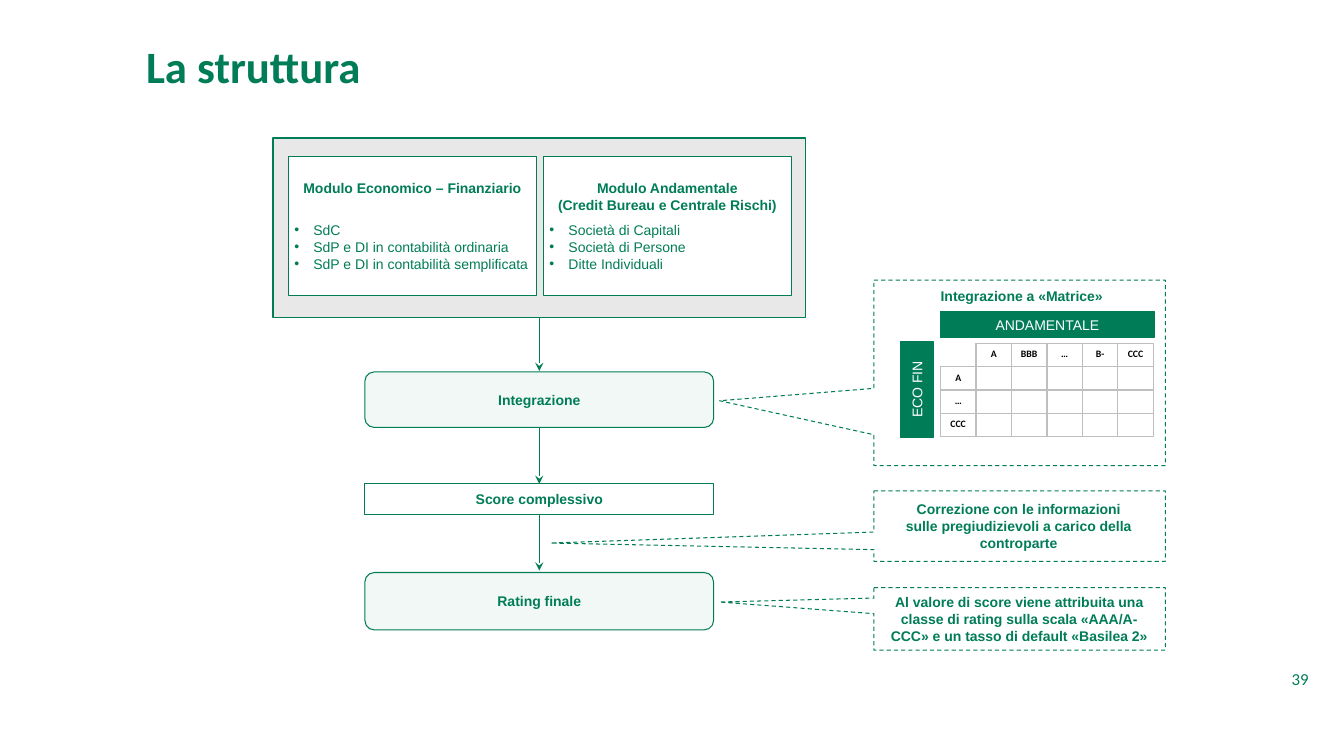
from lxml import etree
from pptx import Presentation
from pptx import util as u
from pptx.dml.color import RGBColor
from pptx.enum import dml, shapes, text
from pptx.oxml import ns

GREEN = RGBColor(0x00, 0x7D, 0x57)
GREY = RGBColor(0xE8, 0xE8, 0xE8)
WHITE = RGBColor(0xFF, 0xFF, 0xFF)
BLACK = RGBColor(0x00, 0x00, 0x00)
BORDER = "BFBFBF"

# Grid of square cells, ten to the inch
COLUMNS, ROWS = 133.33, 75
FLOW_LEFT, FLOW_WIDTH, FLOW_AXIS = 36.2, 34.6, 53.5
NOTE_LEFT, NOTE_WIDTH = 86.7, 28.9
TIGHT = (0.6, 0.3)

LABEL = dict(name="Arial", size=u.Pt(10), bold=True)
PLAIN = dict(LABEL, bold=False)
HEADING = dict(name="Calibri", size=u.Pt(32), bold=True)
FOLIO = dict(name="Calibri", size=u.Pt(12), bold=False)
MATRIX = dict(name="Calibri", size=u.Pt(7), bold=True)

CENTER, LEFT, RIGHT = (text.PP_ALIGN.CENTER, text.PP_ALIGN.LEFT, text.PP_ALIGN.RIGHT)
MIDDLE, TOP, BOTTOM = (text.MSO_ANCHOR.MIDDLE, text.MSO_ANCHOR.TOP,
                       text.MSO_ANCHOR.BOTTOM)
PROCESS = shapes.MSO_SHAPE.FLOWCHART_PROCESS


def cells(*counts):
    return [u.Inches(count / 10) for count in counts]


def child(parent, tag, **attributes):
    return etree.SubElement(parent, ns.qn(tag), attributes)


def style(target, values):
    for key, value in values.items():
        setattr(target, key, value)


def write(frame, lines, form=LABEL, color=GREEN, align=CENTER, anchor=MIDDLE,
          inset=(1, 0.5)):
    side, edge = cells(*inset)
    style(frame, dict(word_wrap=True, vertical_anchor=anchor, margin_left=side,
                      margin_right=side, margin_top=edge, margin_bottom=edge))
    for index, line in enumerate(lines):
        paragraph = frame.paragraphs[0] if index == 0 else frame.add_paragraph()
        paragraph.alignment = align
        run = paragraph.add_run()
        run.text = line
        style(run.font, form)
        run.font.color.rgb = color


def add_bullets(frame, items, gap):
    first = len(frame.paragraphs)
    for item in items:
        paragraph = frame.add_paragraph()
        paragraph.alignment = LEFT
        properties = paragraph._p.get_or_add_pPr()
        indent = int(u.Inches(0.19))
        properties.set("marL", str(indent))
        properties.set("indent", str(-indent))
        child(properties, "a:buFont", typeface="Arial")
        child(properties, "a:buChar", char="•")
        run = paragraph.add_run()
        run.text = item
        style(run.font, PLAIN)
        run.font.color.rgb = GREEN
    frame.paragraphs[first].space_before = u.Pt(gap)


def add_box(slide, kind, at, fill=None, weight=0.75, alpha=None):
    box = slide.shapes.add_shape(kind, *cells(*at))
    box.shadow.inherit = False
    style(box.line, dict(width=u.Pt(weight)))
    box.line.color.rgb = GREEN
    if fill is None:
        box.fill.background()
    else:
        box.fill.solid()
        box.fill.fore_color.rgb = fill
    if alpha:
        tint = box.fill._xPr.find(".//" + ns.qn("a:srgbClr"))
        child(tint, "a:alpha", val=str(alpha * 1000))
    return box


def add_text(slide, at, line, **options):
    frame = slide.shapes.add_textbox(*cells(*at)).text_frame
    write(frame, [line], **options)
    return frame


def add_module(slide, left, titles, items, gap):
    module = add_box(slide, PROCESS, (left, 15.5, 24.6, 13.8), WHITE)
    write(module.text_frame, titles, inset=TIGHT)
    add_bullets(module.text_frame, items, gap)


def add_arrow(slide, start, end):
    arrow = slide.shapes.add_connector(
        shapes.MSO_CONNECTOR.STRAIGHT, *cells(FLOW_AXIS, start, FLOW_AXIS, end))
    arrow.line.width = u.Pt(0.75)
    arrow.line.color.rgb = GREEN
    child(arrow.line._get_or_add_ln(), "a:tailEnd", type="stealth")
    child(arrow._element.spPr, "a:effectLst")


def add_step(slide, top, height, label):
    step = add_box(slide, shapes.MSO_SHAPE.ROUNDED_RECTANGLE,
                   (FLOW_LEFT, top, FLOW_WIDTH, height), GREEN, alpha=5)
    write(step.text_frame, [label])


def add_note(slide, top, height, pointer, label_at, label):
    note = add_box(slide, shapes.MSO_SHAPE.RECTANGULAR_CALLOUT,
                   (NOTE_LEFT, top, NOTE_WIDTH, height))
    note.line.dash_style = dml.MSO_LINE.DASH
    for index, share in enumerate(pointer):
        note.adjustments[index] = share
    add_text(slide, label_at, label, anchor=TOP)


def add_axis(slide, at, label, upward=False):
    axis = add_box(slide, shapes.MSO_SHAPE.RECTANGLE, at, GREEN)
    write(axis.text_frame, [label], PLAIN, WHITE, inset=(0.4, 0))
    if upward:
        axis.text_frame._txBody.bodyPr.set("vert", "vert270")


def border(cell, hidden=()):
    properties = cell._tc.get_or_add_tcPr()
    for index, side in enumerate(("a:lnL", "a:lnR", "a:lnT", "a:lnB")):
        edge = etree.Element(ns.qn(side), w=str(u.Pt(1)))
        if side in hidden:
            child(edge, "a:noFill")
        else:
            child(child(edge, "a:solidFill"), "a:srgbClr", val=BORDER)
        properties.insert(index, edge)


def add_matrix(slide, across, down):
    rows, columns = len(down) + 1, len(across) + 1
    matrix = slide.shapes.add_table(
        rows, columns, *cells(93.3, 34.1, 3.52 * columns, 2.3 * rows)).table
    style(matrix, dict(first_row=False, horz_banding=False))
    for row in range(rows):
        for column in range(columns):
            cell = matrix.cell(row, column)
            cell.fill.solid()
            cell.fill.fore_color.rgb = WHITE
            border(cell, ("a:lnL", "a:lnT") if row + column == 0 else ())
            side, edge = cells(0.2, 0.5)
            style(cell, dict(margin_left=side, margin_right=side,
                             margin_top=edge, margin_bottom=edge))
            paragraph = cell.text_frame.paragraphs[0]
            paragraph.alignment = CENTER
            label = (across[column - 1] if row == 0 and column else
                     down[row - 1] if column == 0 and row else "")
            if label:
                run = paragraph.add_run()
                run.text = label
                style(run.font, MATRIX)
                run.font.color.rgb = BLACK
            else:
                child(paragraph._p, "a:endParaRPr", sz="700")


def main():
    deck = Presentation()
    deck.slide_width, deck.slide_height = cells(COLUMNS, ROWS)
    slide = deck.slides.add_slide(deck.slide_layouts[6])

    # Title and page number
    title = add_text(slide, (13.5, 4, 114.2, 11.4), "La struttura",
                     form=HEADING, align=LEFT, anchor=TOP)
    title.paragraphs[0].line_spacing = 0.9
    add_text(slide, (121.1, 66.2, 9.7, 2.6), "39", form=FOLIO, align=RIGHT,
             anchor=BOTTOM)

    # Flow arrows, partly covered by the boxes
    for start, end in ((27.4, 36.8), (42.5, 48), (50.2, 56.6)):
        add_arrow(slide, start, end)

    # Input modules
    add_box(slide, shapes.MSO_SHAPE.RECTANGLE, (27.1, 13.7, 52.8, 17.8), GREY, 1)
    add_module(slide, 28.6, ["Modulo Economico – Finanziario"],
               ["SdC", "SdP e DI in contabilità ordinaria",
                "SdP e DI in contabilità semplificata"], 18)
    add_module(slide, 53.9, ["Modulo Andamentale", "(Credit Bureau e Centrale Rischi)"],
               ["Società di Capitali", "Società di Persone", "Ditte Individuali"], 6)

    # Flow steps
    add_step(slide, 36.9, 5.5, "Integrazione")
    score = add_box(slide, PROCESS, (FLOW_LEFT, 48, FLOW_WIDTH, 3), WHITE)
    write(score.text_frame, ["Score complessivo"], inset=TIGHT)
    add_step(slide, 56.8, 5.7, "Rating finale")

    # Notes on the steps
    add_note(slide, 27.8, 18.4, (-1.03, 0.15), (88.6, 28, 25.5, 2.4),
             "Integrazione a «Matrice»")
    add_note(slide, 48.7, 7, (-1.61, 0.24), (88.3, 49.2, 25.5, 2.4),
             "Correzione con le informazioni sulle pregiudizievoli a carico della "
             "controparte")
    add_note(slide, 58.3, 6.2, (-1.03, -0.27), (86.7, 58.4, 28.8, 2.4),
             "Al valore di score viene attribuita una classe di rating sulla scala "
             "«AAA/A-CCC» e un tasso di default «Basilea 2»")

    # Integration matrix
    add_matrix(slide, ["A", "BBB", "…", "B-", "CCC"], ["A", "…", "CCC"])
    add_axis(slide, (89.3, 33.9, 3.3, 9.5), "ECO FIN", upward=True)
    add_axis(slide, (93.3, 30.9, 21.2, 2.6), "ANDAMENTALE")

    deck.save("out.pptx")


if __name__ == "__main__":
    main()
